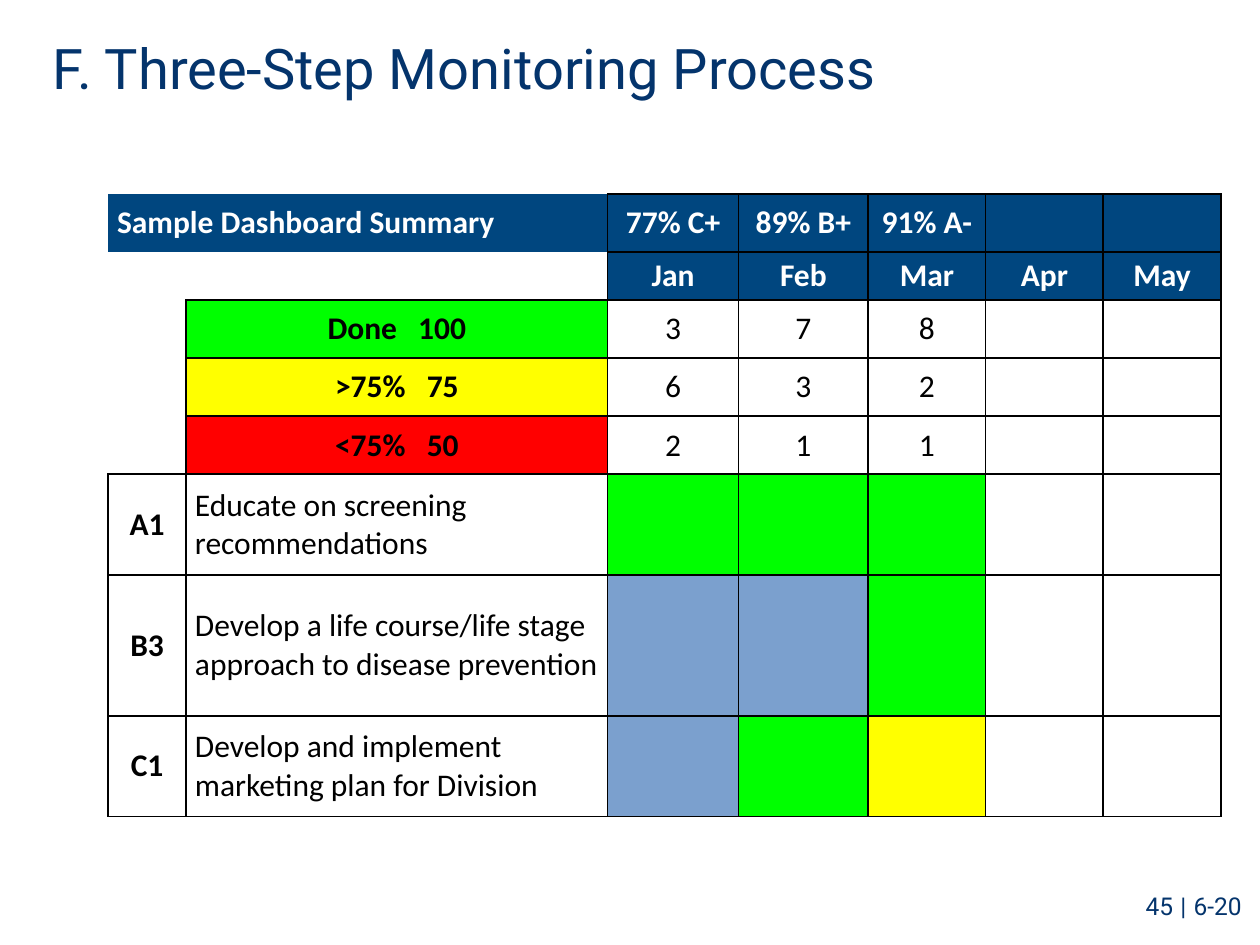
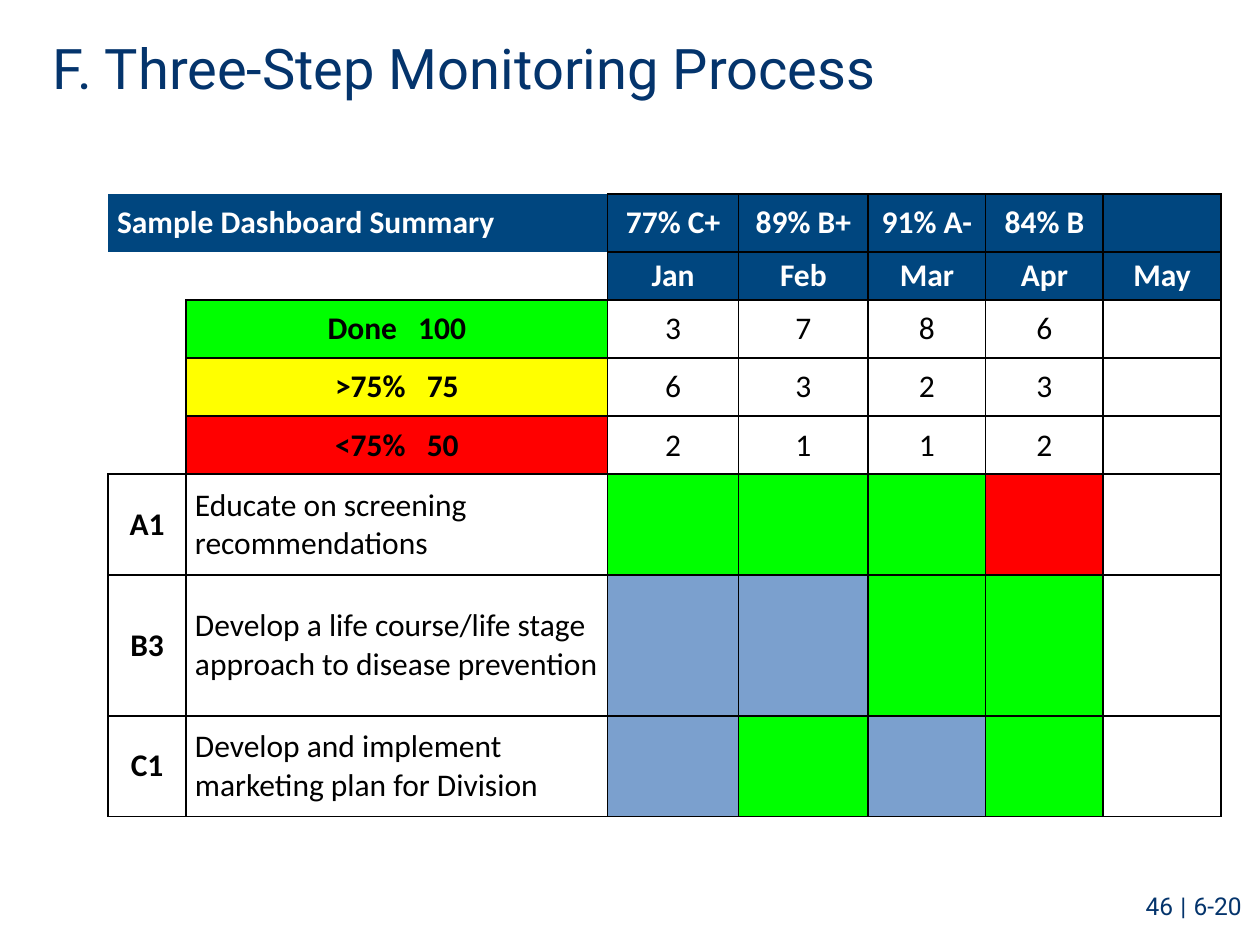
"""Build two monthly dashboard slides for a three-step monitoring process."""

from dataclasses import dataclass, field, replace

from lxml.etree import SubElement
from pptx import Presentation
from pptx.dml.color import RGBColor
from pptx.enum.text import MSO_ANCHOR, MSO_AUTO_SIZE, PP_ALIGN
from pptx.oxml.ns import qn
from pptx.presentation import Presentation as PresentationType
from pptx.slide import Slide
from pptx.table import Table, _Cell
from pptx.text.text import Font
from pptx.util import Cm, Pt


@dataclass(frozen=True)
class Theme:
    navy: str = "04346C"
    header: str = "00467F"
    white: str = "FFFFFF"
    black: str = "000000"
    green: str = "00FF00"
    yellow: str = "FFFF00"
    red: str = "FF0000"
    blue: str = "7BA0CE"
    heading_font: str = "Roboto"
    table_font: str = "Calibri"
    title_size: int = 32
    table_size: int = 18
    footer_size: int = 14
    gap_spacing: int = 8
    border_width: int = 1


THEME = Theme()
NO_GRID_STYLE = "{2D5ABB26-0587-4C30-8999-92F81FD0307C}"
TITLE = "F. Three-Step Monitoring Process"
CHAPTER_PAGE = "6-20"
COLUMN_WIDTHS = (1.57, 8.5, 2.64, 2.61, 2.37, 2.37, 2.37)
ROW_HEIGHTS = (1.17, 0.97, 1.17, 1.17, 1.17, 2.03, 2.84, 2.03)
FIRST_LEVEL_ROW = 2
FIRST_ACTION_ROW = 5
FIRST_MONTH_COLUMN = 2
SIDES = (("a:lnL", 0, -1), ("a:lnR", 0, 1), ("a:lnT", -1, 0), ("a:lnB", 1, 0))


@dataclass(frozen=True)
class Level:
    label: str
    points: str
    color: str


@dataclass(frozen=True)
class Action:
    code: str
    description: str


@dataclass(frozen=True)
class Month:
    name: str
    grade: str = ""
    counts: tuple[int, ...] = ()
    statuses: tuple[str, ...] = ()


@dataclass(frozen=True)
class Dashboard:
    page: int
    months: tuple[Month, ...]


@dataclass(frozen=True)
class CellContent:
    text: str = ""
    points: str = ""
    fill: str = ""
    color: str = THEME.black
    bold: bool = False
    alignment: PP_ALIGN = field(default=PP_ALIGN.CENTER)


LEVELS = (
    Level("Done", "100", THEME.green),
    Level(">75%", "75", THEME.yellow),
    Level("<75%", "50", THEME.red),
)
ACTIONS = (
    Action("A1", "Educate on screening recommendations"),
    Action("B3", "Develop a life course/life stage approach to disease prevention"),
    Action("C1", "Develop and implement marketing plan for Division"),
)
JANUARY = Month("Jan", "77% C+", (3, 6, 2), (THEME.green, THEME.blue, THEME.blue))
FEBRUARY = Month("Feb", "89% B+", (7, 3, 1), (THEME.green, THEME.blue, THEME.green))
MARCH = Month("Mar", "91% A-", (8, 2, 1), (THEME.green, THEME.green, THEME.yellow))
MARCH_REVISED = replace(MARCH, statuses=(THEME.green, THEME.green, THEME.blue))
APRIL = Month("Apr", "84% B", (6, 3, 2), (THEME.red, THEME.green, THEME.green))
DASHBOARDS = (
    Dashboard(45, (JANUARY, FEBRUARY, MARCH, Month("Apr"), Month("May"))),
    Dashboard(46, (JANUARY, FEBRUARY, MARCH_REVISED, APRIL, Month("May"))),
)


def set_font(font: Font, name: str, size: int, color: str, bold: bool = False) -> None:
    font.name = name
    font.size = Pt(size)
    font.bold = bold
    font.color.rgb = RGBColor.from_string(color)


def add_title(slide: Slide) -> None:
    title = slide.shapes.title
    title.left, title.top, title.width, title.height = Cm(0.81), Cm(0), Cm(18.95), Cm(2.69)
    frame = title.text_frame
    frame.text = TITLE
    frame.auto_size = MSO_AUTO_SIZE.NONE
    frame.vertical_anchor = MSO_ANCHOR.MIDDLE
    paragraph = frame.paragraphs[0]
    paragraph.alignment = PP_ALIGN.LEFT
    set_font(paragraph.font, THEME.heading_font, THEME.title_size, THEME.navy)


def add_footer(slide: Slide, page: int) -> None:
    frame = slide.shapes.add_textbox(Cm(22.73), Cm(17.7), Cm(2.67), Cm(1.35)).text_frame
    frame.word_wrap = True
    paragraph = frame.paragraphs[0]
    paragraph.alignment = PP_ALIGN.CENTER
    for text in (str(page), " ", "|", " ", CHAPTER_PAGE):
        run = paragraph.add_run()
        run.text = text
        if text == " ":
            set_font(run.font, THEME.table_font, THEME.table_size, THEME.black)
        else:
            set_font(run.font, THEME.heading_font, THEME.footer_size, THEME.navy)


def header_cell(text: str, alignment: PP_ALIGN = PP_ALIGN.CENTER) -> CellContent:
    return CellContent(text, fill=THEME.header, color=THEME.white, bold=True, alignment=alignment)


def table_contents(months: tuple[Month, ...]) -> dict[tuple[int, int], CellContent]:
    contents = {(0, 0): header_cell("Sample Dashboard Summary", PP_ALIGN.LEFT)}
    for row, level in enumerate(LEVELS, FIRST_LEVEL_ROW):
        contents[row, 1] = CellContent(level.label, level.points, level.color, bold=True)
    for row, action in enumerate(ACTIONS, FIRST_ACTION_ROW):
        contents[row, 0] = CellContent(action.code, bold=True)
        contents[row, 1] = CellContent(action.description, alignment=PP_ALIGN.LEFT)
    for column, month in enumerate(months, FIRST_MONTH_COLUMN):
        contents[0, column] = header_cell(month.grade)
        contents[1, column] = header_cell(month.name)
        for row, count in enumerate(month.counts, FIRST_LEVEL_ROW):
            contents[row, column] = CellContent(str(count))
        for row, status in enumerate(month.statuses, FIRST_ACTION_ROW):
            contents[row, column] = CellContent(fill=status)
    return contents


def is_boxed(row: int, column: int) -> bool:
    if not (0 <= row < len(ROW_HEIGHTS) and 0 <= column < len(COLUMN_WIDTHS)):
        return False
    first_boxed_row = (FIRST_ACTION_ROW, FIRST_LEVEL_ROW)
    return column >= FIRST_MONTH_COLUMN or row >= first_boxed_row[column]


def draw_borders(cell: _Cell, row: int, column: int) -> None:
    properties = cell._tc.get_or_add_tcPr()
    for tag, row_step, column_step in SIDES:
        reach = cell.span_width if column_step > 0 else 1
        neighbour = (row + row_step, column + column_step * reach)
        if is_boxed(row, column) or is_boxed(*neighbour):
            line = SubElement(properties, qn(tag), w=str(Pt(THEME.border_width)))
            fill = SubElement(line, qn("a:solidFill"))
            SubElement(fill, qn("a:srgbClr"), val=THEME.black)


def fill_cell(cell: _Cell, content: CellContent) -> None:
    cell.margin_left = cell.margin_right = Cm(0.18)
    cell.margin_top = cell.margin_bottom = Cm(0)
    cell.vertical_anchor = MSO_ANCHOR.MIDDLE
    if content.fill:
        cell.fill.solid()
        cell.fill.fore_color.rgb = RGBColor.from_string(content.fill)
    else:
        cell.fill.background()
    paragraph = cell.text_frame.paragraphs[0]
    paragraph.alignment = content.alignment
    set_font(paragraph.font, THEME.table_font, THEME.table_size, content.color, content.bold)
    if content.text:
        paragraph.add_run().text = content.text
    if content.points:
        gap = paragraph.add_run()
        gap.text = " "
        gap._r.get_or_add_rPr().set("spc", str(THEME.gap_spacing * 100))
        paragraph.add_run().text = content.points


def size_table(table: Table) -> None:
    for column, width in zip(table.columns, COLUMN_WIDTHS):
        column.width = Cm(width)
    for row, height in zip(table.rows, ROW_HEIGHTS):
        row.height = Cm(height)


def add_dashboard_table(slide: Slide, months: tuple[Month, ...]) -> None:
    graphic_frame = slide.shapes.add_table(
        len(ROW_HEIGHTS), len(COLUMN_WIDTHS),
        Cm(2.18), Cm(3.91), Cm(sum(COLUMN_WIDTHS)), Cm(sum(ROW_HEIGHTS)),
    )
    table = graphic_frame.table
    table.first_row = table.horz_banding = False
    for style in graphic_frame.element.iter(qn("a:tableStyleId")):
        style.text = NO_GRID_STYLE
    size_table(table)
    table.cell(0, 0).merge(table.cell(0, 1))
    contents = table_contents(months)
    for row in range(len(ROW_HEIGHTS)):
        for column in range(len(COLUMN_WIDTHS)):
            cell = table.cell(row, column)
            draw_borders(cell, row, column)
            fill_cell(cell, contents.get((row, column), CellContent()))


def add_dashboard_slide(presentation: PresentationType, dashboard: Dashboard) -> None:
    title_only = presentation.slide_layouts.get_by_name("Title Only")
    slide = presentation.slides.add_slide(title_only)
    add_title(slide)
    add_dashboard_table(slide, dashboard.months)
    add_footer(slide, dashboard.page)


def main() -> None:
    presentation = Presentation()
    presentation.slide_width, presentation.slide_height = Cm(25.4), Cm(19.05)
    for dashboard in DASHBOARDS:
        add_dashboard_slide(presentation, dashboard)
    presentation.save("out.pptx")


if __name__ == "__main__":
    main()
